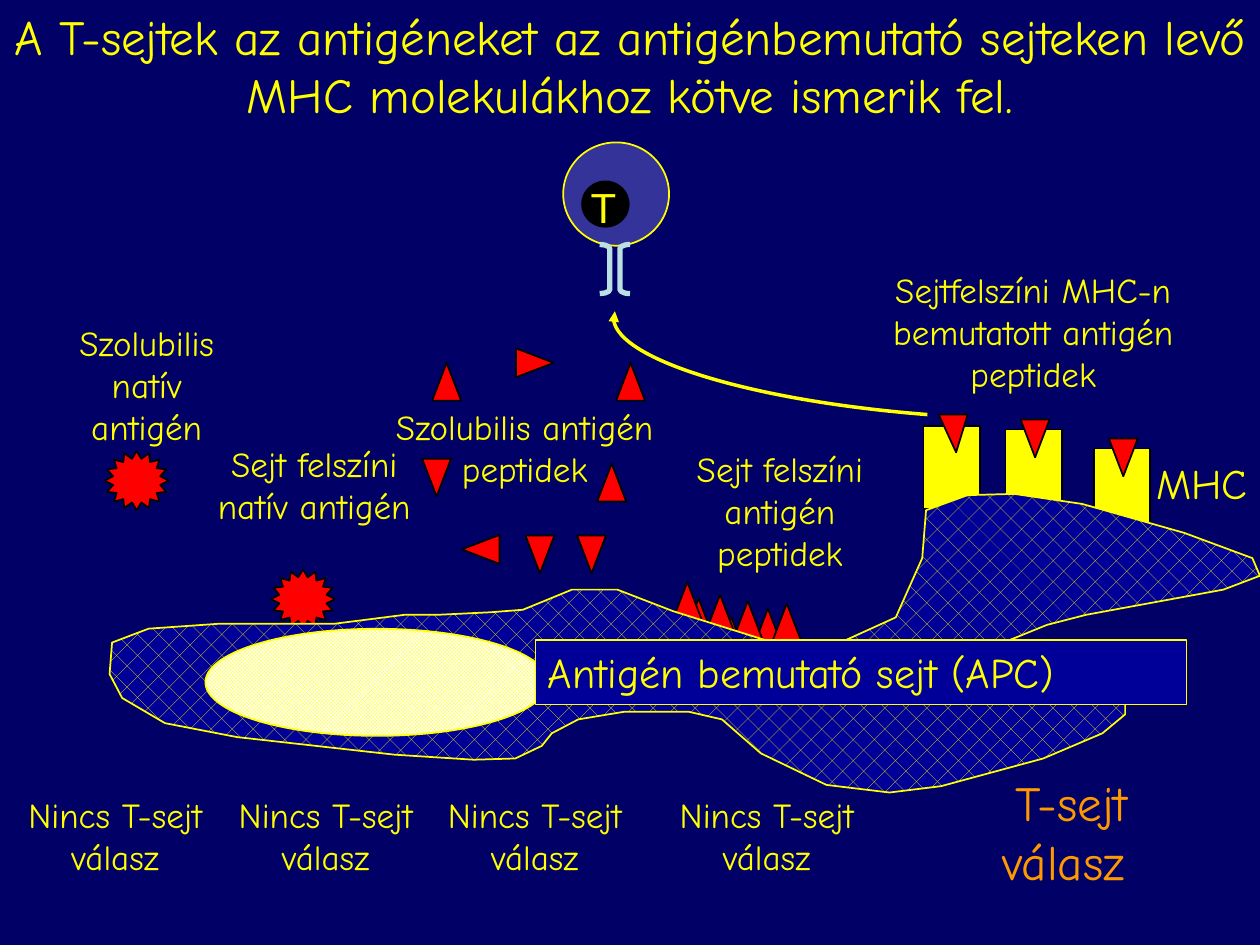
"""Build the slide on how T cells recognise antigens bound to MHC molecules."""
from pptx import Presentation
from pptx.dml.color import RGBColor as RGB
from pptx.enum.dml import MSO_PATTERN as PAT
from pptx.enum.shapes import MSO_SHAPE as SHAPE
from pptx.enum.text import PP_ALIGN as ALIGN
from pptx.oxml.ns import qn
from pptx.util import Inches, Pt
from lxml.etree import SubElement

HUE = {name: RGB.from_string(code) for name, code in {
    "back": "000066", "yellow": "FFFF00", "red": "FF0000", "edge": "000202",
    "blue": "000099", "cell": "333399", "black": "000000", "white": "FFFFFF",
    "orange": "FF9900", "pale": "BBE0E3"}.items()}

deck = Presentation()
deck.slide_width, deck.slide_height = Inches(10), Inches(7.5)
slide = deck.slides.add_slide(deck.slide_layouts[6])
slide.background.fill.solid()
slide.background.fill.fore_color.rgb = HUE["back"]
shapes = slide.shapes


def put(kind, box, fill="red", line="edge", width=1, turn=0):
    shape = shapes.add_shape(kind, *map(Inches, box))
    shape.shadow.inherit = False
    shape.rotation = turn
    if fill:
        shape.fill.solid()
        shape.fill.fore_color.rgb = HUE[fill]
    else:
        shape.fill.background()
    shape.line.color.rgb = HUE[line]
    shape.line.width = Pt(width)
    return shape


def say(text, box, size=20, hue="yellow", font="Comic Neue",
        align=ALIGN.CENTER, wrap=True):
    shape = shapes.add_textbox(*map(Inches, box))
    shape.text_frame.word_wrap = wrap
    para = shape.text_frame.paragraphs[0]
    para.alignment = align
    run = para.add_run()
    run.text = text
    run.font.size = Pt(size)
    run.font.name = font
    run.font.color.rgb = HUE[hue]
    return shape


for x, y in [(7.33, 3.38), (7.98, 3.41), (8.68, 3.56)]:
    put(SHAPE.RECTANGLE, (x, y, 0.45, 0.66), "yellow")

for x, y in [(5.43, 4.75), (5.98, 4.83), (5.69, 4.9), (5.34, 4.62),
             (5.6, 4.72), (5.82, 4.77), (6.13, 4.79)]:
    put(SHAPE.ISOSCELES_TRIANGLE, (x, y, 0.23, 0.3))
say("Sejt felszíni antigén peptidek", (5.25, 3.5, 1.88, 1.1))

say("A T-sejtek az antigéneket az antigénbemutató sejteken levő "
    "MHC molekulákhoz kötve ismerik fel.", (0, 0, 10, 1.03), size=28)

put(SHAPE.OVAL, (4.47, 1.13, 0.84, 0.82), "cell", "yellow")
put(SHAPE.OVAL, (4.62, 1.44, 0.37, 0.36), "black")
say("T", (4.59, 1.39, 0.4, 0.5), size=24, font="Arial", wrap=False)

say(" T-sejt válasz", (7.33, 6.08, 2.22, 1.03), size=28, hue="orange")
for x in (0, 1.67, 3.33, 5.17):
    say("Nincs T-sejt válasz", (x, 6.25, 1.83, 0.76))

say("Szolubilis natív antigén", (0.33, 2.5, 1.67, 1.1))
say("Sejt felszíni natív antigén", (1.58, 3.46, 1.83, 1.1))
for x, y in [(0.83, 3.58), (2.15, 4.52)]:
    put(SHAPE.STAR_16_POINT, (x, y, 0.51, 0.47))

say("Szolubilis antigén peptidek", (3, 3.17, 2.33, 1.1))
for turn, spots in {
        0: [(3.43, 2.88), (4.89, 2.88), (4.74, 3.68)],
        90: [(4.13, 2.73)],
        180: [(3.35, 3.64), (4.17, 4.25), (4.58, 4.25),
              (7.45, 3.29), (8.1, 3.33), (8.8, 3.48)],
        270: [(3.7, 4.21)]}.items():
    for x, y in spots:
        peptide = put(SHAPE.ISOSCELES_TRIANGLE, (x, y, 0.23, 0.3), turn=turn)
        if x == 7.45:
            peptide.adjustments[0] = 0.4
say("Sejtfelszíni MHC-n bemutatott antigén peptidek", (6.49, 2.08, 3.42, 1.1))

pen = shapes.build_freeform(736, 329, scale=Inches(0.01))
pen.add_line_segments([(595, 318), (484, 283), (487, 251), (488, 247)], close=False)
arrow = pen.convert_to_shape()
arrow.shadow.inherit = False
arrow.fill.background()
arrow.line.color.rgb = HUE["yellow"]
arrow.line.width = Pt(2)
curve, *rest = list(arrow.element.iter(qn("a:lnTo")))[:3]
curve.tag = qn("a:cubicBezTo")
for step in rest:
    curve.append(step[0])
    step.getparent().remove(step)
stroke = next(arrow.element.iter(qn("a:ln")))
SubElement(stroke, qn("a:tailEnd"), type="triangle")

rim = [
    (389, 486), (347, 488), (321, 488), (266, 495), (175, 495), (118, 499),
    (89, 510), (87, 535), (97, 554), (131, 574), (188, 585), (313, 599),
    (376, 603), (409, 602), (430, 592), (438, 582), (459, 571), (495, 565),
    (547, 565), (573, 571), (604, 598), (656, 623), (706, 629), (747, 624),
    (828, 602), (875, 582), (893, 567), (893, 556), (859, 531), (794, 511),
    (831, 496), (862, 488), (971, 468), (1000, 457), (994, 443), (940, 423),
    (859, 400), (805, 392), (768, 393), (735, 405), (732, 443), (711, 490),
    (656, 515), (620, 512), (534, 485), (490, 468), (454, 468), (415, 484)]
pen = shapes.build_freeform(*rim[0], scale=Inches(0.01))
pen.add_line_segments(rim[1:], close=True)
body = pen.convert_to_shape()
body.shadow.inherit = False
body.line.color.rgb = HUE["yellow"]
body.line.width = Pt(1)
core = put(SHAPE.OVAL, (1.63, 4.99, 2.72, 0.85), "white", "yellow")
for part, weave, back in [(body, PAT.DOTTED_DIAMOND, "blue"),
                          (core, PAT.SMALL_CHECKER_BOARD, "white")]:
    part.fill.patterned()
    part.fill.pattern = weave
    part.fill.fore_color.rgb = HUE["yellow"]
    part.fill.back_color.rgb = HUE[back]

label = say("Antigén bemutató sejt (APC)", (4.25, 5.08, 5.17, 0.51),
            size=24, align=ALIGN.LEFT)
label.fill.solid()
label.fill.fore_color.rgb = HUE["blue"]
label.line.color.rgb = HUE["yellow"]
label.line.width = Pt(0.75)
say("MHC", (9.08, 3.58, 1.17, 0.5), size=24, align=ALIGN.LEFT)

for kind, x in [(SHAPE.LEFT_BRACKET, 4.92), (SHAPE.RIGHT_BRACKET, 4.76)]:
    half = put(kind, (x, 1.94, 0.08, 0.39), None, "pale", 3)
    half.adjustments[0] = 0.42

deck.save("out.pptx")
